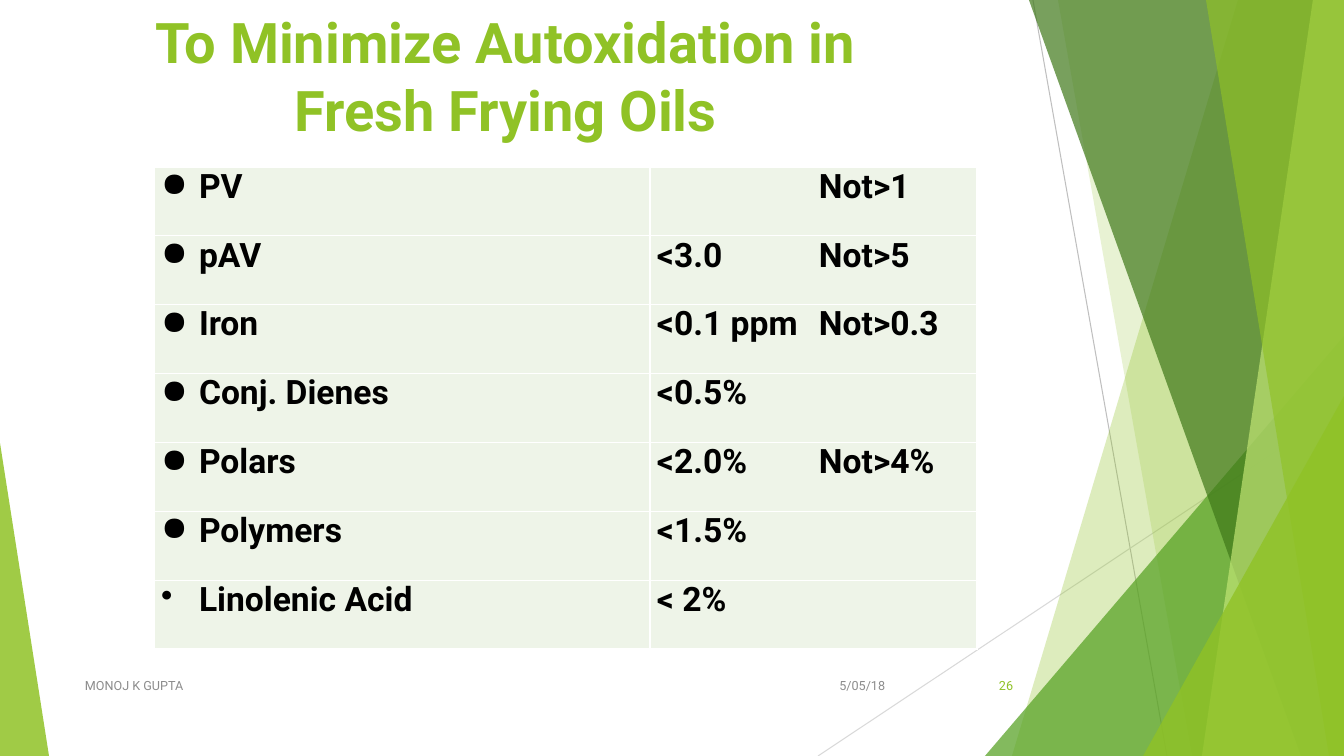
from dataclasses import dataclass

from lxml import etree
from pptx import Presentation
from pptx.dml.color import RGBColor
from pptx.enum.shapes import MSO_CONNECTOR, MSO_SHAPE
from pptx.enum.text import MSO_ANCHOR, PP_ALIGN
from pptx.oxml.ns import qn
from pptx.util import Emu, Pt

STRAIGHT = MSO_CONNECTOR.STRAIGHT
TRIANGLE, RECTANGLE = MSO_SHAPE.ISOSCELES_TRIANGLE, MSO_SHAPE.RECTANGLE
LEFT, CENTER, RIGHT = PP_ALIGN.LEFT, PP_ALIGN.CENTER, PP_ALIGN.RIGHT
TOP, MIDDLE = MSO_ANCHOR.TOP, MSO_ANCHOR.MIDDLE
WIDTH, HEIGHT = 1344, 756
SCALE = 12192000 / WIDTH


@dataclass(frozen=True)
class Theme:
    font: str = "Roboto"
    title: int = 40
    body: int = 24
    small: int = 9
    white: str = "FFFFFF"
    black: str = "000000"
    gray: str = "8C8C8C"
    line_dark: str = "BFBFBF"
    line_light: str = "D9D9D9"
    cell: str = "EEF4E8"
    green: str = "90C226"
    leaf: str = "54A021"
    forest: str = "3F7819"
    lime: str = "C0E474"


T = Theme()

LIMITS = [
    ("●", "PV", "\tNot>1"),
    ("●", "pAV", "<3.0\tNot>5"),
    ("●", "Iron", "<0.1 ppm\tNot>0.3"),
    ("●", "Conj. Dienes", "<0.5%"),
    ("●", "Polars", "<2.0%\tNot>4%"),
    ("●", "Polymers", "<1.5%"),
    ("•", "Linolenic Acid", "< 2%"),
]


def px(n):
    return Emu(round(n * SCALE))


def add_xml(parent, tag, **attrs):
    el = etree.SubElement(parent, qn(tag))
    for key, value in attrs.items():
        el.set(key, str(value))
    return el


def paint(shape, color, opacity=100):
    shape.shadow.inherit = False
    shape.line.fill.background()
    shape.fill.solid()
    shape.fill.fore_color.rgb = RGBColor.from_string(color)
    if opacity < 100:
        add_xml(shape.fill._xPr.find(".//" + qn("a:srgbClr")), "a:alpha", val=opacity * 1000)


def write(tf, text, size=T.body, color=T.black, bold=False, align=LEFT, anchor=TOP, after=0):
    tf.word_wrap = True
    tf.vertical_anchor = anchor
    p = tf.paragraphs[0]
    p.alignment = align
    p.space_after = Pt(after)
    r = p.add_run()
    r.text = text
    r.font.name = T.font
    r.font.size = Pt(size)
    r.font.bold = bold
    r.font.color.rgb = RGBColor.from_string(color)
    return p


def hairline(s, x1, y1, x2, y2, color):
    c = s.shapes.add_connector(STRAIGHT, px(x1), px(y1), px(x2), px(y2))
    c.line.color.rgb = RGBColor.from_string(color)
    c.line.width = Pt(0.75)
    add_xml(c._element.spPr, "a:effectLst")


def shard(s, top, bottom, color, opacity):
    """Fill from a slanted left edge, given by its top and bottom x, to the right slide edge."""
    fb = s.shapes.build_freeform(px(top), 0, scale=1.0)
    fb.add_line_segments([(px(WIDTH), 0), (px(WIDTH), px(HEIGHT)), (px(bottom), px(HEIGHT))])
    paint(fb.convert_to_shape(), color, opacity)


def corner(s, x, y, w, peak, color, opacity):
    """Right triangle standing on the bottom edge, its peak at 0 (left) or 1 (right)."""
    sp = s.shapes.add_shape(TRIANGLE, px(x), px(y), px(w), px(HEIGHT - y))
    sp.adjustments[0] = peak
    paint(sp, color, opacity)


def facets(s):
    hairline(s, 1033, 0, 1167, HEIGHT, T.line_dark)
    hairline(s, WIDTH, 406, 818, HEIGHT, T.line_light)
    shard(s, 1238, 1012, T.green, 30)
    shard(s, 1058, 1192, T.green, 20)
    corner(s, 985, 336, 359, 1, T.leaf, 72)
    shard(s, 1029, 1301, T.forest, 70)
    shard(s, 1313, 1202, T.lime, 70)
    shard(s, 1206, 1329, T.green, 65)
    corner(s, 1143, 396, 201, 1, T.green, 80)
    corner(s, 0, 443, 49, 0, T.green, 85)


def footer(s, x, y, w, h):
    parts = [
        (0, 695, "MONOJ K GUPTA", T.gray, LEFT),
        (w - 229, 101, "5/05/18", T.gray, RIGHT),
        (w - 76, 76, "26", T.green, RIGHT),
    ]
    for dx, width, text, color, align in parts:
        box = s.shapes.add_textbox(px(x + dx), px(y), px(width), px(h))
        write(box.text_frame, text, size=T.small, color=color, align=align, anchor=MIDDLE)


def title(s, x, y, w, h):
    sp = s.shapes.add_shape(RECTANGLE, px(x), px(y), px(w), px(h))
    paint(sp, T.white)
    write(sp.text_frame, "To Minimize Autoxidation in Fresh Frying Oils",
          size=T.title, color=T.green, bold=True, align=CENTER)


def style_cell(cell):
    cell.margin_left = cell.margin_right = px(7)
    cell.margin_top = cell.margin_bottom = 0
    tcPr = cell._tc.get_or_add_tcPr()
    for side in ("a:lnL", "a:lnR", "a:lnT", "a:lnB"):
        fill = add_xml(add_xml(tcPr, side, w=Pt(1)), "a:solidFill")
        add_xml(fill, "a:srgbClr", val=T.white)
    cell.fill.solid()
    cell.fill.fore_color.rgb = RGBColor.from_string(T.cell)


def add_bullet(p, char, indent):
    pPr = p._p.get_or_add_pPr()
    pPr.set("marL", str(px(indent)))
    pPr.set("indent", str(px(-indent)))
    add_xml(pPr, "a:buChar", char=char)


def add_tab(p, pos):
    tabs = add_xml(p._p.get_or_add_pPr(), "a:tabLst")
    add_xml(tabs, "a:tab", pos=px(pos), algn="l")


def limits_table(s, x, y, w, h):
    table = s.shapes.add_table(len(LIMITS), 2, px(x), px(y), px(w), px(h)).table
    table.first_row = table.horz_banding = False
    name_w = 496
    table.columns[0].width = px(name_w)
    table.columns[1].width = px(w - name_w)
    for i, (char, name, limit) in enumerate(LIMITS):
        table.rows[i].height = px(h / len(LIMITS))
        name_cell, limit_cell = table.rows[i].cells
        for cell in (name_cell, limit_cell):
            style_cell(cell)
        add_bullet(write(name_cell.text_frame, name, bold=True, after=3), char, 38)
        p = write(limit_cell.text_frame, limit, bold=True, after=3)
        if "\t" in limit:
            add_tab(p, 162)


def main():
    prs = Presentation()
    prs.slide_width, prs.slide_height = px(WIDTH), px(HEIGHT)
    s = prs.slides.add_slide(prs.slide_layouts[6])
    facets(s)
    footer(s, 75, 666, 948, 40)
    limits_table(s, 154, 167, 823, 482)
    title(s, 96, 3, 819, 146)
    prs.save("out.pptx")


if __name__ == "__main__":
    main()
